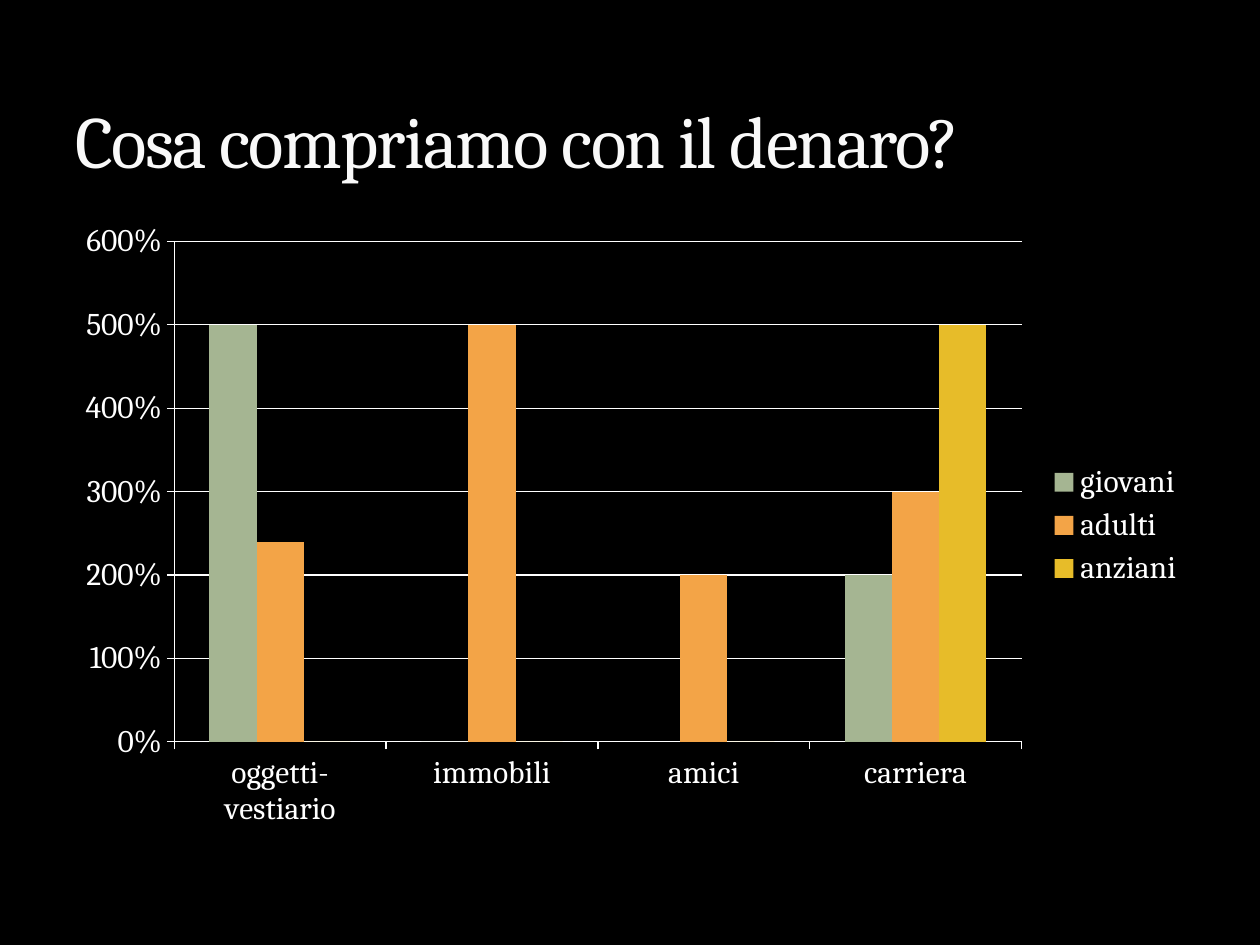
from pptx import Presentation
from pptx.chart.data import CategoryChartData
from pptx.dml.color import RGBColor
from pptx.enum.chart import XL_CHART_TYPE as ChartType, XL_LEGEND_POSITION as LegendPosition
from pptx.enum.chart import XL_TICK_MARK as TickMark
from pptx.enum.text import MSO_ANCHOR as Anchor
from pptx.util import Inches, Pt

TITLE = "Cosa compriamo con il denaro?"
CATEGORIES = ["oggetti-vestiario", "immobili", "amici", "carriera"]
SERIES = [
    ("giovani", (5, 0, None, 2), "A5B592"),
    ("adulti ", (2.4, 5, 2, 3), "F3A447"),
    ("anziani", (0, 0, 0, 5), "E7BC29"),
]
FONT = "Cambria"
BLACK, WHITE, TITLE_COLOR = "000000", "FFFFFF", "F9F9F9"
WIDTH, HEIGHT, MARGIN = 10, 7.5, 0.5
TITLE_TOP, TITLE_HEIGHT = 0.17, 1.33
CHART_TOP, CHART_HEIGHT = 1.67, 5


def apply(target, values):
    for name, value in values.items():
        setattr(target, name, value)


def paint(fill, color):
    fill.solid()
    fill.fore_color.rgb = RGBColor.from_string(color)


def style_font(font, size, color):
    apply(font, {"name": FONT, "size": Pt(size), "bold": False})
    paint(font.fill, color)


def style_line(line):
    paint(line.fill, WHITE)
    line.width = Pt(0.75)


def place(top, height):
    return [Inches(n) for n in (MARGIN, top, WIDTH - 2 * MARGIN, height)]


def add_title(page):
    frame = page.shapes.add_textbox(*place(TITLE_TOP, TITLE_HEIGHT)).text_frame
    apply(frame, {"word_wrap": True, "vertical_anchor": Anchor.BOTTOM})
    span = frame.paragraphs[0].add_run()
    span.text = TITLE
    style_font(span.font, 42, TITLE_COLOR)
    span.font._element.set("spc", "-100")


def add_bars(page):
    data = CategoryChartData(number_format="0%")
    data.categories = CATEGORIES
    for name, values, _ in SERIES:
        data.add_series(name, values)
    chart = page.shapes.add_chart(
        ChartType.COLUMN_CLUSTERED, *place(CHART_TOP, CHART_HEIGHT), data).chart
    apply(chart, {"has_title": False, "has_legend": True})
    style_font(chart.font, 18, WHITE)
    apply(chart.legend, {"position": LegendPosition.RIGHT, "include_in_layout": False})

    plot = chart.plots[0]
    apply(plot, {"vary_by_categories": False, "gap_width": 150, "overlap": 0})
    for series, (_, _, color) in zip(plot.series, SERIES):
        paint(series.format.fill, color)
        series.invert_if_negative = False

    for axis in (chart.category_axis, chart.value_axis):
        apply(axis, {"major_tick_mark": TickMark.OUTSIDE, "minor_tick_mark": TickMark.NONE})
        style_line(axis.format.line)
    apply(chart.value_axis, {"minimum_scale": 0, "maximum_scale": 6, "major_unit": 1,
                             "has_major_gridlines": True})
    style_line(chart.value_axis.major_gridlines.format.line)
    apply(chart.value_axis.tick_labels,
          {"number_format": "0%", "number_format_is_linked": False})


def main():
    """Build the slide on what money buys for each age group."""
    deck = Presentation()
    apply(deck, {"slide_width": Inches(WIDTH), "slide_height": Inches(HEIGHT)})
    page = deck.slides.add_slide(deck.slide_layouts[6])
    paint(page.background.fill, BLACK)
    add_bars(page)
    add_title(page)
    deck.save("out.pptx")


if __name__ == "__main__":
    main()
